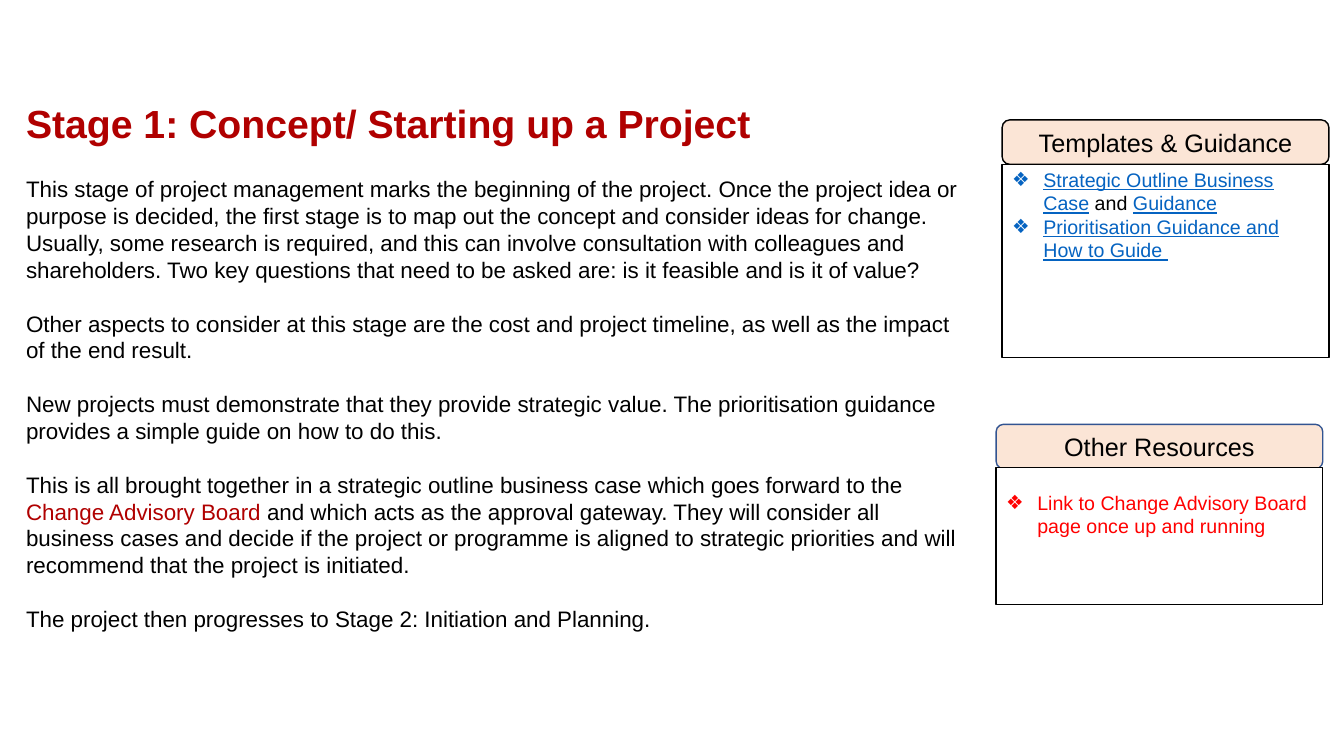
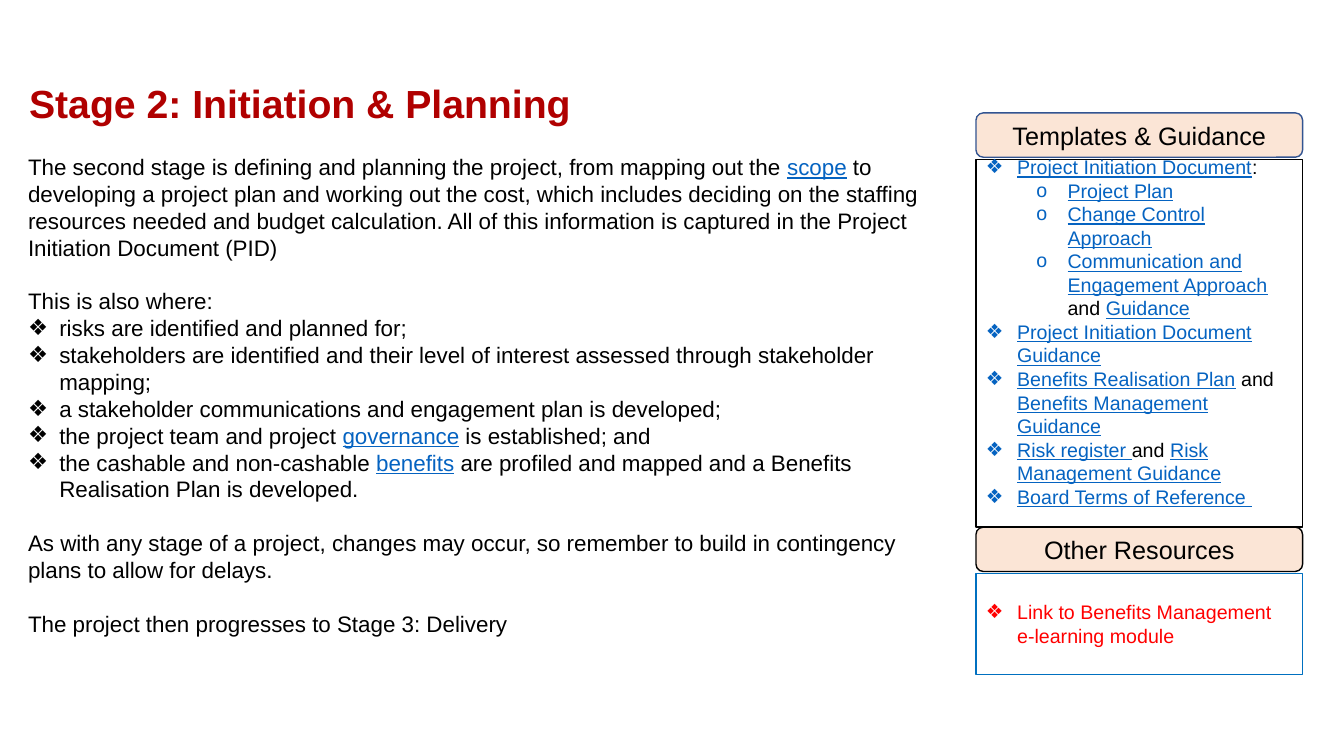
from dataclasses import dataclass

import pptx
import pptx.dml.color
import pptx.enum.shapes
import pptx.enum.text
import pptx.oxml.ns
import pptx.util
from lxml import etree

Inches = pptx.util.Inches
Shape = pptx.enum.shapes.MSO_SHAPE
Anchor = pptx.enum.text.MSO_ANCHOR
Align = pptx.enum.text.PP_ALIGN


@dataclass(frozen=True)
class Theme:
    font: str = "Arial"
    text: str = "000000"
    accent: str = "B00000"
    link: str = "0563C1"
    pending: str = "FF0000"
    header_fill: str = "FBE5D6"
    card_fill: str = "FFFFFF"
    navy_line: str = "325491"
    blue_line: str = "0070C0"
    title_size: int = 28
    header_size: int = 18
    body_size: int = 16
    card_size: int = 14
    line_pitch: float = 1.2
    hanging: float = 0.31
    card_width: float = 3.24
    header_height: float = 0.44


THEME = Theme()
BULLET_INDENTS = {"❖": 0.31, "o": 0.81}


@dataclass(frozen=True)
class Run:
    text: str
    color: str = THEME.text
    underline: bool = False


@dataclass(frozen=True)
class Paragraph:
    runs: tuple
    bullet: str = ""
    gap: bool = False


def link(text):
    return Run(text, THEME.link, True)


def as_runs(parts):
    return tuple(Run(part) if isinstance(part, str) else part for part in parts)


def line(*parts):
    return Paragraph(as_runs(parts))


def spaced(*parts):
    return Paragraph(as_runs(parts), gap=True)


def item(*parts):
    return Paragraph(as_runs(parts), "❖")


def subitem(*parts):
    return Paragraph(as_runs(parts), "o")


def rgb(value):
    return pptx.dml.color.RGBColor.from_string(value)


class Deck:
    def __init__(self, theme):
        self.theme = theme
        self.presentation = pptx.Presentation()
        self.presentation.slide_width = Inches(13.33)
        self.presentation.slide_height = Inches(7.5)
        self.slide = None

    def new_slide(self):
        self.slide = self.presentation.slides.add_slide(self.presentation.slide_layouts[6])

    def add_bullet(self, paragraph, character):
        properties = paragraph._p.get_or_add_pPr()
        properties.set("marL", str(Inches(BULLET_INDENTS[character])))
        properties.set("indent", str(-Inches(self.theme.hanging)))
        for tag, name, value in (
            ("a:buFont", "typeface", self.theme.font),
            ("a:buChar", "char", character),
        ):
            etree.SubElement(properties, pptx.oxml.ns.qn(tag)).set(name, value)

    def fill_text(self, shape, paragraphs, size, anchor, align=Align.LEFT, bold=False):
        text_frame = shape.text_frame
        text_frame.word_wrap = True
        text_frame.vertical_anchor = anchor
        pitch = pptx.util.Pt(size * self.theme.line_pitch)
        for index, content in enumerate(paragraphs):
            paragraph = text_frame.add_paragraph() if index else text_frame.paragraphs[0]
            if content.bullet:
                self.add_bullet(paragraph, content.bullet)
            paragraph.alignment = align
            paragraph.line_spacing = pitch
            if content.gap:
                paragraph.space_before = pitch
            for part in content.runs:
                run = paragraph.add_run()
                run.text = part.text
                run.font.name = self.theme.font
                run.font.size = pptx.util.Pt(size)
                run.font.bold = bold
                run.font.underline = part.underline
                run.font.color.rgb = rgb(part.color)

    def text_box(self, left, top, width, height):
        return self.slide.shapes.add_textbox(
            Inches(left), Inches(top), Inches(width), Inches(height)
        )

    def title(self, text, left, top, width):
        box = self.text_box(left, top, width, 0.7)
        title = line(Run(text, self.theme.accent))
        self.fill_text(box, [title], self.theme.title_size, Anchor.BOTTOM, bold=True)

    def body(self, paragraphs, left, top, width, height):
        box = self.text_box(left, top, width, height)
        self.fill_text(box, paragraphs, self.theme.body_size, Anchor.TOP)

    def panel(self, kind, left, top, height, fill, outline):
        shape = self.slide.shapes.add_shape(
            kind, Inches(left), Inches(top), Inches(self.theme.card_width), Inches(height)
        )
        shape.shadow.inherit = False
        shape.fill.solid()
        shape.fill.fore_color.rgb = rgb(fill)
        shape.line.color.rgb = rgb(outline)
        shape.line.width = pptx.util.Pt(1)
        return shape

    def header(self, text, left, top, outline):
        shape = self.panel(
            Shape.ROUNDED_RECTANGLE, left, top, self.theme.header_height,
            self.theme.header_fill, outline,
        )
        self.fill_text(shape, [line(text)], self.theme.header_size, Anchor.MIDDLE, Align.CENTER)

    def card(self, paragraphs, left, top, height, outline, bottom_gap=0):
        shape = self.panel(
            Shape.RECTANGLE, left, top, height, self.theme.card_fill, outline
        )
        shape.text_frame.margin_top = 0
        shape.text_frame.margin_bottom = Inches(bottom_gap)
        self.fill_text(shape, paragraphs, self.theme.card_size, Anchor.MIDDLE)


def concept_slide(deck):
    theme = deck.theme
    deck.new_slide()
    deck.header("Templates & Guidance", 9.94, 1.19, theme.text)
    deck.card([
        item(link("Strategic Outline Business Case"), " and ", link("Guidance")),
        item(link("Prioritisation Guidance and How to Guide ")),
    ], 9.94, 1.63, 1.92, theme.text, bottom_gap=0.92)
    deck.header("Other Resources", 9.88, 4.21, theme.navy_line)
    deck.card([
        item(Run("Link to Change Advisory Board page once up and running", theme.pending)),
    ], 9.88, 4.64, 1.36, theme.text, bottom_gap=0.44)
    deck.title("Stage 1: Concept/ Starting up a Project", 0.16, 0.8, 12.13)
    deck.body([
        line("This stage of project management marks the beginning of the project. Once the "
             "project idea or purpose is decided, the first stage is to map out the concept "
             "and consider ideas for change. Usually, some research is required, and this can "
             "involve consultation with colleagues and shareholders. Two key questions that "
             "need to be asked are: is it feasible and is it of value?"),
        spaced("Other aspects to consider at this stage are the cost and project timeline, "
               "as well as the impact of the end result."),
        spaced("New projects must demonstrate that they provide strategic value. The "
               "prioritisation guidance provides a simple guide on how to do this."),
        spaced("This is all brought together in a strategic outline business case which goes "
               "forward to the ",
               Run("Change Advisory Board ", theme.accent),
               "and which acts as the approval gateway. They will consider all business cases "
               "and decide if the project or programme is aligned to strategic priorities and "
               "will recommend that the project is initiated."),
        spaced("The project then progresses to Stage 2: Initiation and Planning."),
    ], 0.16, 1.69, 9.6, 4.95)


def planning_slide(deck):
    theme = deck.theme
    deck.new_slide()
    deck.title("Stage 2: Initiation & Planning", 0.19, 0.6, 7.32)
    deck.header("Templates & Guidance", 9.68, 1.12, theme.navy_line)
    deck.card([
        item(link("Project Initiation Document"), ":"),
        subitem(link("Project Plan")),
        subitem(link("Change Control Approach")),
        subitem(link("Communication and Engagement Approach"), " and ", link("Guidance")),
        item(link("Project Initiation Document Guidance")),
        item(link("Benefits Realisation Plan"), " and ", link("Benefits Management Guidance")),
        item(link("Risk register "), "and ", link("Risk Management Guidance")),
        item(link("Board Terms of Reference ")),
    ], 9.68, 1.58, 3.65, theme.text, bottom_gap=0.23)
    deck.header("Other Resources", 9.68, 5.23, theme.text)
    deck.card([
        item(Run("Link to Benefits Management e-learning module", theme.pending)),
    ], 9.68, 5.69, 1, theme.blue_line)
    deck.body([
        line("The second stage is defining and planning the project, from mapping out the ",
             link("scope"),
             " to developing a project plan and working out the cost, which includes deciding "
             "on the staffing resources needed and budget calculation. All of this "
             "information is captured in the Project Initiation Document (PID)"),
        spaced("This is also where:"),
        item("risks are identified and planned for;"),
        item("stakeholders are identified and their level of interest assessed through "
             "stakeholder mapping;"),
        item("a stakeholder communications and engagement plan is developed;"),
        item("the project team and project ", link("governance"), " is established; and"),
        item("the cashable and non-cashable ", link("benefits"),
             " are profiled and mapped and a Benefits Realisation Plan is developed."),
        spaced("As with any stage of a project, changes may occur, so remember to build in "
               "contingency plans to allow for delays."),
        spaced("The project then progresses to Stage 3: Delivery"),
    ], 0.18, 1.47, 9.26, 5.22)


def main():
    deck = Deck(THEME)
    concept_slide(deck)
    planning_slide(deck)
    deck.presentation.save("out.pptx")


if __name__ == "__main__":
    main()
